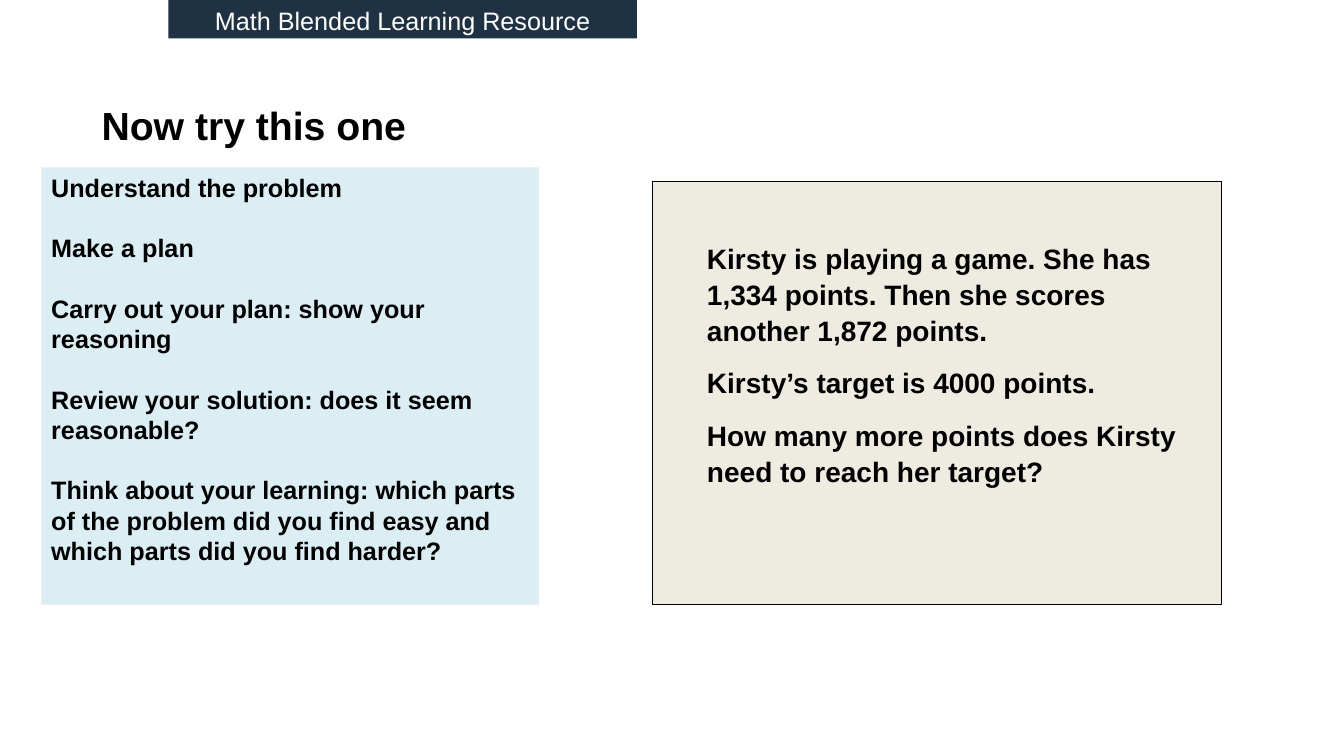
from pptx import Presentation
from pptx import util as u
from pptx.dml.color import RGBColor
from pptx.enum import shapes, text


def color(value):
    """Turn a hex string into a colour."""
    return RGBColor.from_string(value)


def write(sp, lines, size=18, ink="000000", bold=True, align="LEFT", anchor="TOP",
          gap=0, spacing=None, left=7.2, top=3.6):
    """Fill a shape with paragraphs set in one format."""
    tf = sp.text_frame
    tf.word_wrap = True
    tf.vertical_anchor = text.MSO_ANCHOR[anchor]
    tf.margin_left, tf.margin_top = u.Pt(left), u.Pt(top)
    for i, line in enumerate(lines):
        p = tf.add_paragraph() if i else tf.paragraphs[0]
        p.alignment = text.PP_ALIGN[align]
        p.space_before = u.Pt(gap if i else 0)
        if spacing:
            p.line_spacing = spacing
        r = p.add_run()
        r.text = line
        r.font.name, r.font.size, r.font.bold = "Arial", u.Pt(size), bold
        r.font.color.rgb = color(ink)


def panel(s, box, fill, line=None):
    """Add a filled rectangle, outlined when a line colour is given."""
    sp = s.shapes.add_shape(shapes.MSO_SHAPE.RECTANGLE, *map(u.Pt, box))
    sp.shadow.inherit = False
    sp.fill.solid()
    sp.fill.fore_color.rgb = color(fill)
    if line:
        sp.line.color.rgb = color(line)
        sp.line.width = u.Pt(0.75)
    else:
        sp.line.fill.background()
    return sp


def title(s, box):
    """Add the slide title."""
    sp = s.shapes.add_textbox(*map(u.Pt, box))
    write(sp, ["Now try this one"], size=28, anchor="MIDDLE")


def steps(s, box):
    """Add the problem-solving steps."""
    write(panel(s, box, "DBEEF4"), [
        "Understand the problem",
        "Make a plan",
        "Carry out your plan: show your reasoning",
        "Review your solution: does it seem reasonable?",
        "Think about your learning: which parts of the problem did you find easy "
        "and which parts did you find harder?",
    ], gap=21.6)


def banner(s, box):
    """Add the resource banner."""
    write(panel(s, box, "1F3244"), ["Math Blended Learning Resource"],
          ink="FFFFFF", bold=False, align="CENTER")


def problem(s, box):
    """Add the word problem."""
    write(panel(s, box, "EEECE1", line="000000"), [
        "Kirsty is playing a game. She has 1,334 points. "
        "Then she scores another 1,872 points.",
        "Kirsty’s target is 4000 points.",
        "How many more points does Kirsty need to reach her target?",
    ], size=20, gap=12, spacing=1.07, left=39, top=41)


def main():
    """Build and save the slide."""
    prs = Presentation()
    prs.slide_width, prs.slide_height = u.Pt(960), u.Pt(540)
    s = prs.slides.add_slide(prs.slide_layouts[6])
    title(s, (65.5, 66.2, 648, 46))
    steps(s, (29.5, 119.5, 355.7, 312.5))
    banner(s, (120.2, 0, 334.8, 27.4))
    problem(s, (466, 129.6, 406.8, 302.4))
    prs.save("out.pptx")


if __name__ == "__main__":
    main()
